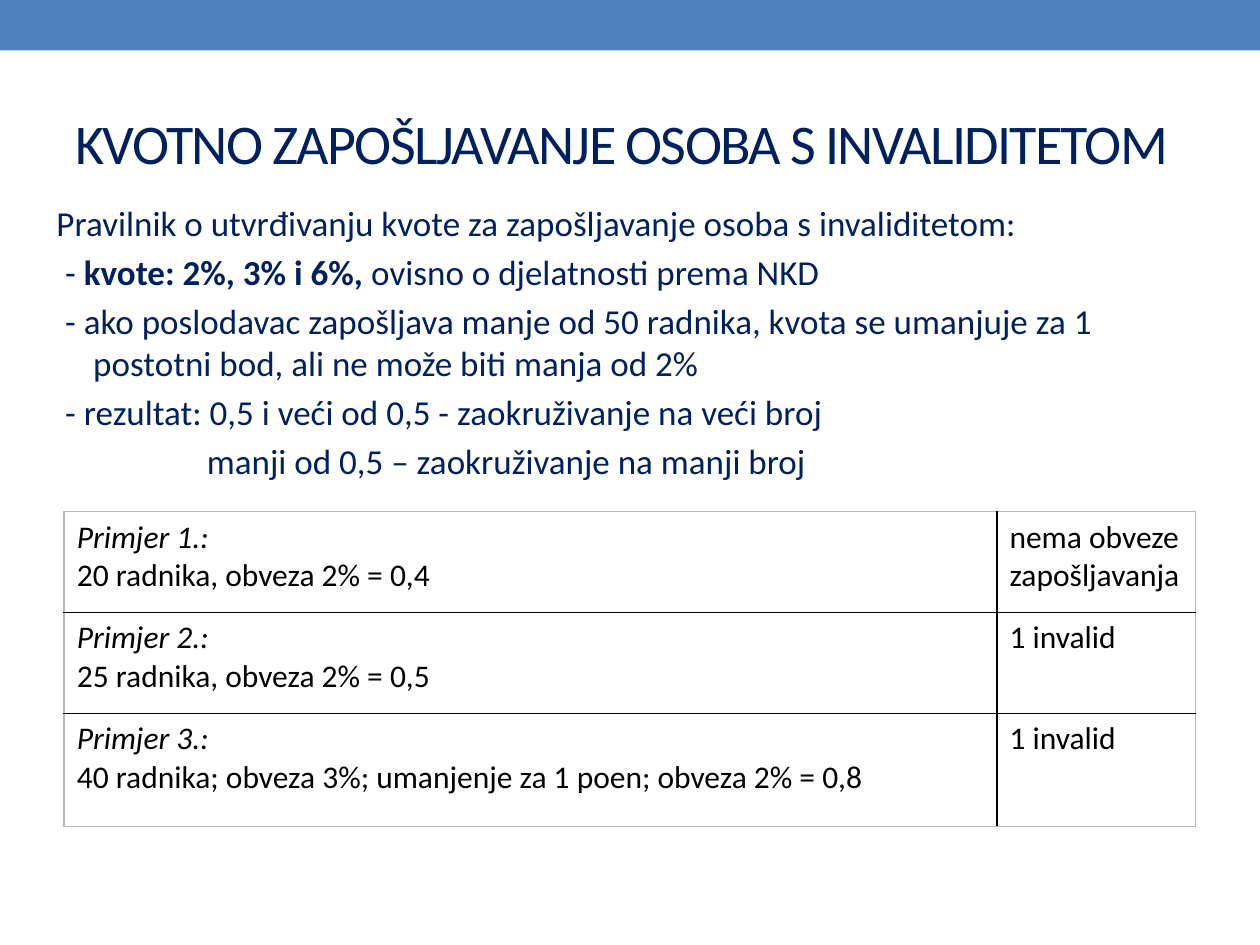
from pptx import Presentation
from pptx.dml.color import RGBColor
from pptx.enum.shapes import MSO_SHAPE
from pptx.enum.text import MSO_ANCHOR, PP_ALIGN
from pptx.oxml import parse_xml
from pptx.oxml.ns import nsdecls
from pptx.util import Pt

RECTANGLE = MSO_SHAPE.RECTANGLE
MIDDLE = MSO_ANCHOR.MIDDLE
TOP = MSO_ANCHOR.TOP
LEFT = PP_ALIGN.LEFT

FONT = "Calibri"
NAVY, BLUE, BLACK, GREY = "002060", "4F81BD", "000000", "B8B8B8"

TITLE = "KVOTNO ZAPOŠLJAVANJE OSOBA S INVALIDITETOM"
RULES = [
    (0, 0, [("Pravilnik o utvrđivanju kvote za zapošljavanje osoba s invaliditetom:", False)]),
    (21, 5, [("- ", False), ("kvote: 2%, 3% i 6%,", True),
             (" ovisno o djelatnosti prema NKD", False)]),
    (21, 5, [("- ako poslodavac zapošljava manje od 50 radnika, kvota se umanjuje za 1 "
              "postotni bod, ali ne može biti manja od 2%", False)]),
    (49, 5, [("- rezultat: 0,5 i veći od 0,5 - zaokruživanje na veći broj", False)]),
    (86, 86, [("manji od 0,5 – zaokruživanje na manji broj", False)]),
]
EXAMPLES = [
    ("Primjer 1.:", "20 radnika, obveza 2% = 0,4", "nema obveze zapošljavanja"),
    ("Primjer 2.:", "25 radnika, obveza 2% = 0,5", "1 invalid"),
    ("Primjer 3.:", "40 radnika; obveza 3%; umanjenje za 1 poen; obveza 2% = 0,8", "1 invalid"),
]
COLUMN_WIDTHS = [533, 113.4]
ROW_HEIGHTS = [57.6, 57.6, 64.8]


def color(value):
    """Turn a hex string into a colour."""
    return RGBColor.from_string(value)


def style(font, size, value):
    """Set the typeface, size and colour of a font."""
    font.name, font.size = FONT, Pt(size)
    font.color.rgb = color(value)


def add_band(slide):
    """Draw the band along the top edge."""
    band = slide.shapes.add_shape(RECTANGLE, 0, 0, Pt(720), Pt(28.8))
    band.shadow.inherit = False
    band.fill.solid()
    band.fill.fore_color.rgb = color(BLUE)
    band.line.fill.background()


def set_title(slide):
    """Place and format the title placeholder."""
    title = slide.shapes.title
    title.left, title.top, title.width, title.height = Pt(36), Pt(42), Pt(648), Pt(78)
    frame = title.text_frame
    frame.text = TITLE
    frame.vertical_anchor = MIDDLE
    paragraph = frame.paragraphs[0]
    paragraph.alignment = LEFT
    run = paragraph.runs[0]
    style(run.font, 32, NAVY)
    run.font._element.set("spc", "-100")


def add_rules(slide):
    """Write the rules with hanging indents."""
    box = slide.shapes.add_textbox(Pt(25.2), Pt(111.6), Pt(674.6), Pt(170))
    frame = box.text_frame
    frame.word_wrap = True
    for index, (margin, first_line, parts) in enumerate(RULES):
        paragraph = frame.add_paragraph() if index else frame.paragraphs[0]
        properties = paragraph._p.get_or_add_pPr()
        properties.set("marL", str(Pt(margin)))
        properties.set("indent", str(Pt(first_line - margin)))
        paragraph.space_before = Pt(4 if index else 0)
        for text, bold in parts:
            run = paragraph.add_run()
            run.text = text
            style(run.font, 20, NAVY)
            run.font.bold = bold


def set_borders(cell, outer_sides):
    """Draw grey outer and black inner cell borders."""
    properties = cell._tc.get_or_add_tcPr()
    for side in "LRTB":
        value = GREY if side in outer_sides else BLACK
        properties.append(parse_xml(
            f'<a:ln{side} {nsdecls("a")} w="{Pt(1)}"><a:solidFill>'
            f'<a:srgbClr val="{value}"/></a:solidFill></a:ln{side}>'))
    cell.fill.background()


def add_examples(slide):
    """Build the table of worked examples."""
    rows, columns = len(ROW_HEIGHTS), len(COLUMN_WIDTHS)
    table = slide.shapes.add_table(rows, columns, Pt(36.7), Pt(292.4),
                                   Pt(sum(COLUMN_WIDTHS)), Pt(sum(ROW_HEIGHTS))).table
    table.first_row = table.horz_banding = False
    for column, width in zip(table.columns, COLUMN_WIDTHS):
        column.width = Pt(width)
    for row_index, (name, calculation, result) in enumerate(EXAMPLES):
        table.rows[row_index].height = Pt(ROW_HEIGHTS[row_index])
        for column_index, text in enumerate((f"{name}\n{calculation}", result)):
            cell = table.cell(row_index, column_index)
            cell.text_frame.text = text
            cell.vertical_anchor = TOP
            for paragraph in cell.text_frame.paragraphs:
                run = paragraph.runs[0]
                style(run.font, 18, BLACK)
                run.font.italic = run.text == name
            outer_sides = "R" if column_index else "L"
            outer_sides += {0: "T", rows - 1: "B"}.get(row_index, "")
            set_borders(cell, outer_sides)


def main():
    """Build and save the slide."""
    presentation = Presentation()
    presentation.slide_width, presentation.slide_height = Pt(720), Pt(540)
    slide = presentation.slides.add_slide(presentation.slide_layouts[5])
    add_band(slide)
    set_title(slide)
    add_rules(slide)
    add_examples(slide)
    presentation.save("out.pptx")


if __name__ == "__main__":
    main()
